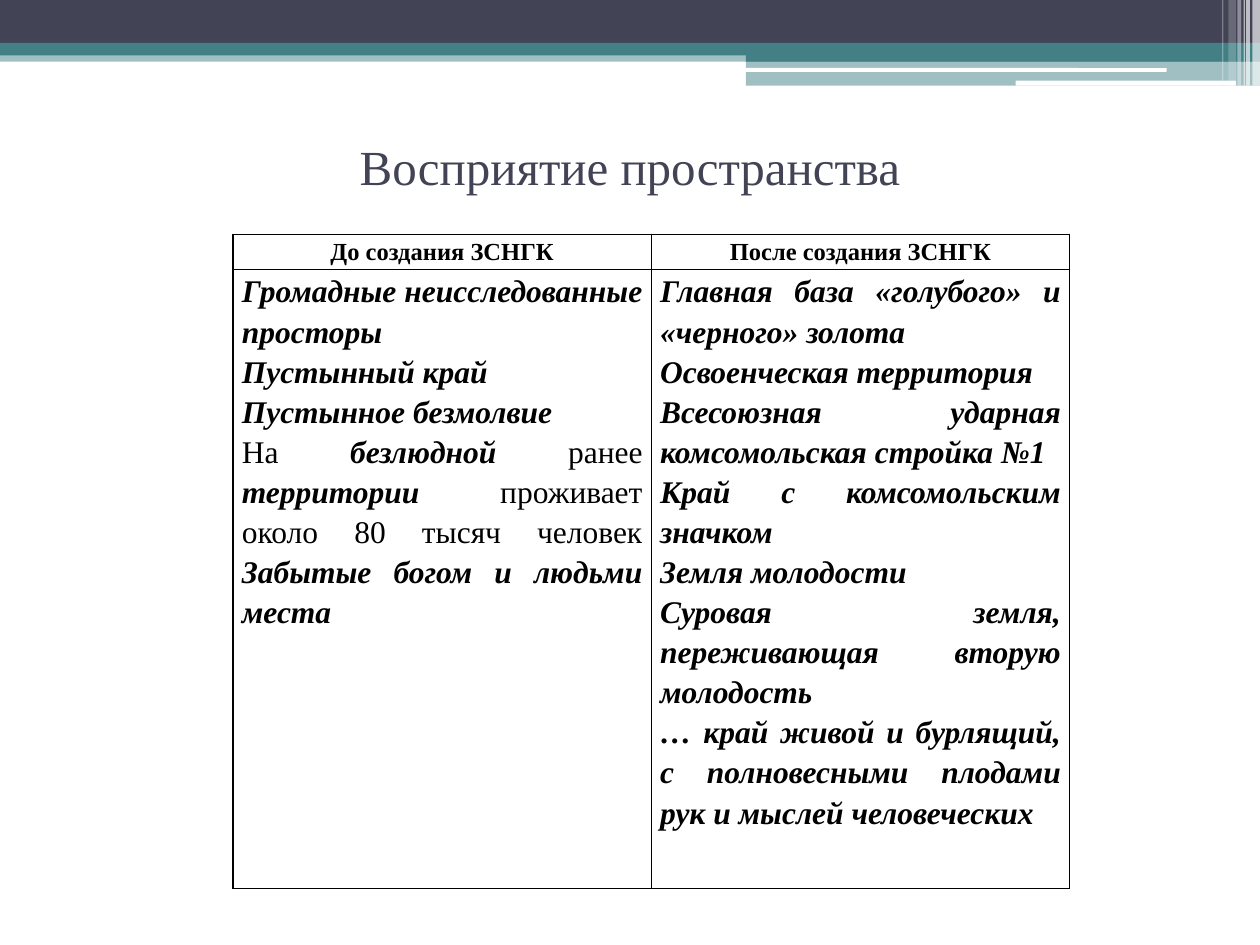
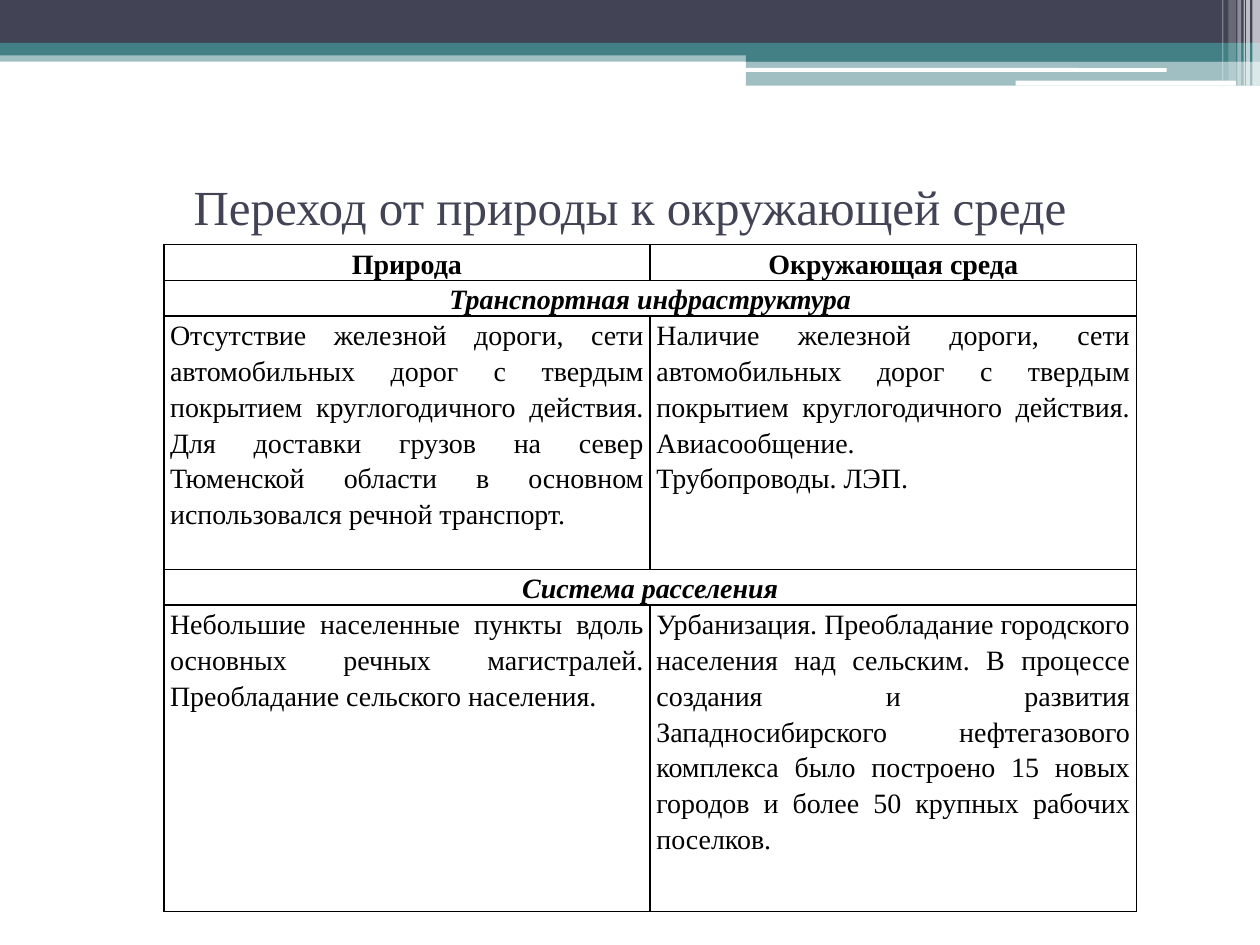
from lxml import etree
from pptx import Presentation
from pptx.dml.color import RGBColor
from pptx.enum.shapes import MSO_SHAPE
from pptx.enum.text import MSO_ANCHOR, PP_ALIGN
from pptx.oxml.ns import qn
from pptx.util import Inches, Pt

RECT, ROUND = MSO_SHAPE.RECTANGLE, MSO_SHAPE.ROUNDED_RECTANGLE
CENTER, JUSTIFY = PP_ALIGN.CENTER, PP_ALIGN.JUSTIFY
MIDDLE = MSO_ANCHOR.MIDDLE

FONT = "Times New Roman"
COLORS = {"navy": "424456", "teal": "438086", "white": "FFFFFF", "black": "000000"}

# Header bands: preset, colour, opacity in percent, left, top, width, height
BANDS = [
    (RECT, "teal", 50, 0, 0.4, 10, 0.09),
    (RECT, "navy", 100, 0, 0, 10, 0.34),
    (RECT, "teal", 100, 0, 0.34, 10, 0.1),
    (RECT, "teal", 100, 5.92, 0.39, 4.08, 0.1),
    (RECT, "teal", 50, 5.92, 0.48, 4.08, 0.2),
    (ROUND, "white", 100, 5.91, 0.54, 3.35, 0.03),
    (ROUND, "white", 100, 8.06, 0.64, 1.75, 0.04),
]
# Thin stripes at the right end: left, width, height, opacity
STRIPES = [
    (9.94, 0.06, 0.68, 65), (9.89, 0.03, 0.68, 65), (9.87, 0.01, 0.68, 60),
    (9.82, 0.03, 0.68, 40), (9.75, 0.06, 0.64, 20), (9.7, 0.01, 0.64, 30),
]
BANDS += [(RECT, "white", opacity, left, 0, width, height)
          for left, width, height, opacity in STRIPES]

# Row styles: bold, italic, alignment
STYLES = {
    "header": (True, False, CENTER),
    "section": (True, True, CENTER),
    "quotes": (True, True, JUSTIFY),
    "body": (False, False, JUSTIFY),
}

# A row is (height, style, size, cells); a cell is a list of paragraphs;
# a paragraph is a string or a list of (text, emphasised) spans.
SLIDES = [
    {
        "title": "Восприятие пространства",
        "title_top": 0.92, "title_height": 0.79,
        "left": 1.85, "top": 1.86, "column": 3.32, "margin": 0.07,
        "rows": [
            (0.28, "header", 14, [["До создания ЗСНГК"], ["После создания ЗСНГК"]]),
            (4.91, "quotes", 18, [
                [
                    "Громадные неисследованные просторы",
                    "Пустынный край",
                    "Пустынное безмолвие",
                    [("На ", False), ("безлюдной", True), (" ранее ", False),
                     ("территории", True),
                     (" проживает около 80 тысяч человек ", False),
                     ("Забытые богом и людьми места", True)],
                ],
                [
                    "Главная база «голубого» и «черного» золота",
                    "Освоенческая территория",
                    "Всесоюзная ударная комсомольская стройка №1",
                    "Край с комсомольским значком",
                    "Земля молодости",
                    "Суровая земля, переживающая вторую молодость",
                    "… край живой и бурлящий, с полновесными плодами "
                    "рук и мыслей человеческих",
                ],
            ]),
        ],
    },
    {
        "title": "Переход от природы к окружающей среде",
        "title_top": 1.25, "title_height": 0.77,
        "left": 1.3, "top": 1.94, "column": 3.86, "margin": 0.05,
        "rows": [
            (0.28, "header", 16, [["Природа"], ["Окружающая среда"]]),
            (0.28, "section", 16, [["Транспортная инфраструктура"]]),
            (2.01, "body", 16, [
                ["Отсутствие железной дороги, сети автомобильных дорог с твердым "
                 "покрытием круглогодичного действия. Для доставки грузов на север "
                 "Тюменской области в основном использовался речной транспорт."],
                ["Наличие железной дороги, сети автомобильных дорог с твердым "
                 "покрытием круглогодичного действия. Авиасообщение.",
                 "Трубопроводы. ЛЭП."],
            ]),
            (0.28, "section", 16, [["Система расселения"]]),
            (2.43, "body", 16, [
                ["Небольшие населенные пункты вдоль основных речных магистралей. "
                 "Преобладание сельского населения."],
                ["Урбанизация. Преобладание городского населения над сельским. "
                 "В процессе создания и развития Западносибирского нефтегазового "
                 "комплекса было построено 15 новых городов и более 50 крупных "
                 "рабочих поселков."],
            ]),
        ],
    },
]


def rgb(name):
    return RGBColor.from_string(COLORS[name])


def set_font(font, size, color):
    font.name, font.size = FONT, Pt(size)
    font.color.rgb = rgb(color)


def add_bands(page, layout):
    """Draw the header bands and place them behind the layout's placeholders."""
    anchor = layout.placeholders[0].element
    for number, (preset, color, opacity, *place) in enumerate(BANDS, start=100):
        band = page.shapes.add_shape(preset, *map(Inches, place))
        band.shadow.inherit = False
        band.fill.solid()
        band.fill.fore_color.rgb = rgb(color)
        band.line.fill.background()
        if opacity < 100:
            tint = band.element.find(".//" + qn("a:srgbClr"))
            etree.SubElement(tint, qn("a:alpha"), val=str(opacity * 1000))
        band.element.find(".//" + qn("p:cNvPr")).set("id", str(number))
        anchor.addprevious(band.element)


def add_title(page, content):
    title = page.shapes.title
    title.left, title.width = Inches(0.5), Inches(9)
    title.top = Inches(content["title_top"])
    title.height = Inches(content["title_height"])
    title.text_frame.text = content["title"]
    title.text_frame.vertical_anchor = MIDDLE
    para = title.text_frame.paragraphs[0]
    para.alignment = CENTER
    set_font(para.font, 28, "navy")


def add_borders(cell):
    properties = cell._tc.get_or_add_tcPr()
    for position, side in enumerate(("a:lnL", "a:lnR", "a:lnT", "a:lnB")):
        line = etree.Element(qn(side), w=str(Pt(1)))
        fill = etree.SubElement(line, qn("a:solidFill"))
        etree.SubElement(fill, qn("a:srgbClr"), val=COLORS["black"])
        properties.insert(position, line)


def write_cell(cell, paragraphs, style, size):
    bold, italic, alignment = STYLES[style]
    frame = cell.text_frame
    for index, content in enumerate(paragraphs):
        para = frame.add_paragraph() if index else frame.paragraphs[0]
        para.alignment, para.line_spacing = alignment, 1.15
        set_font(para.font, size, "black")
        if isinstance(content, str):
            para.text = content
            para.font.bold, para.font.italic = bold, italic
            continue
        for text, emphasised in content:
            span = para.add_run()
            span.text = text
            span.font.bold = span.font.italic = emphasised


def add_comparison(page, content):
    rows, column = content["rows"], content["column"]
    total = sum(row[0] for row in rows)
    table = page.shapes.add_table(
        len(rows), 2, Inches(content["left"]), Inches(content["top"]),
        Inches(2 * column), Inches(total)).table
    table.first_row = table.horz_banding = False

    for row, (height, style, size, cells) in enumerate(rows):
        table.rows[row].height = Inches(height)
        if len(cells) == 1:
            table.cell(row, 0).merge(table.cell(row, 1))
        for cell in table.rows[row].cells:
            cell.margin_left = cell.margin_right = Inches(content["margin"])
            cell.margin_top = cell.margin_bottom = 0
            cell.fill.background()
            add_borders(cell)
        for index, paragraphs in enumerate(cells):
            write_cell(table.cell(row, index), paragraphs, style, size)


def main():
    deck = Presentation()
    deck.slide_width, deck.slide_height = Inches(10), Inches(7.5)
    layout = deck.slide_layouts.get_by_name("Title Only")
    for number, content in enumerate(SLIDES):
        page = deck.slides.add_slide(layout)
        if number == 0:
            add_bands(page, layout)
        add_title(page, content)
        add_comparison(page, content)
    deck.save("out.pptx")


if __name__ == "__main__":
    main()
